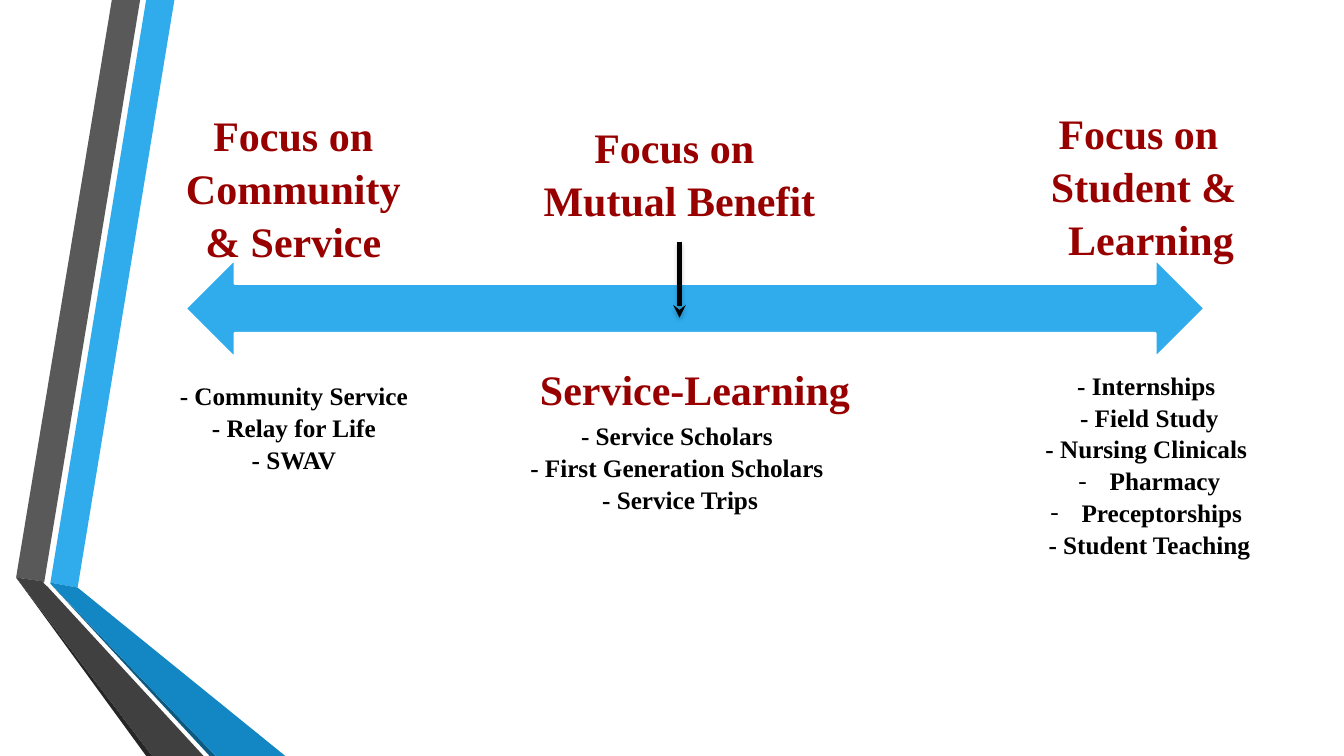
from collections import namedtuple

from lxml import etree
from pptx import Presentation, util as u
from pptx.dml.color import RGBColor
from pptx.enum import shapes, text
from pptx.oxml import ns, parse_xml

BLUE = RGBColor(0x30, 0xAC, 0xEC)
DEEP_BLUE = RGBColor(0x12, 0x87, 0xC3)
NAVY = RGBColor(0x0C, 0x5A, 0x82)
GRAY = RGBColor(0x59, 0x59, 0x59)
DARK_GRAY = RGBColor(0x40, 0x40, 0x40)
COAL = RGBColor(0x26, 0x26, 0x26)
RED = RGBColor(0x98, 0x00, 0x00)
BLACK = RGBColor(0x00, 0x00, 0x00)
WHITE = RGBColor(0xFF, 0xFF, 0xFF)
FONT = "Times New Roman"
HEADING, ITEM = 30, 18

SHADOW = (
    f'<a:effectLst {ns.nsdecls("a")}>'
    '<a:outerShdw blurRad="38100" dist="25400" dir="5400000" rotWithShape="0">'
    '<a:srgbClr val="000000"><a:alpha val="25000"/></a:srgbClr>'
    '</a:outerShdw></a:effectLst>'
)

RIBBONS = [
    (BLUE, [(12.73, 77.07), (22.85, 77.73), (58.8, 0), (48.31, 0)]),
    (GRAY, [(46.07, 0), (35.58, 0), (0, 76.4), (10.49, 76.93)]),
    (COAL, [(0, 76.4), (48.31, 100), (50.56, 100)]),
    (NAVY, [(12.73, 77.2), (71.91, 100), (74.16, 100)]),
    (DEEP_BLUE, [(12.73, 77.2), (74.16, 100), (100, 100), (22.85, 77.73), (12.73, 77.07)]),
    (DARK_GRAY, [(69.66, 100), (11.99, 77.73), (10.11, 77.07), (10.49, 76.93),
                 (0, 76.4), (50.56, 100)]),
]


class Box(namedtuple("Box", "left top width height")):
    def point(self, across, down):
        return (round(self.left + self.width * across / 100),
                round(self.top + self.height * down / 100))

    def area(self, left, top, width, height):
        return Box(*self.point(left, top),
                   round(self.width * width / 100), round(self.height * height / 100))


def draw_ribbons(page, box):
    for color, corners in RIBBONS:
        points = [box.point(*corner) for corner in corners]
        builder = page.shapes.build_freeform(*points[0])
        builder.add_line_segments(points[1:], close=True)
        ribbon = builder.convert_to_shape()
        ribbon.shadow.inherit = False
        ribbon.fill.solid()
        ribbon.fill.fore_color.rgb = color
        ribbon.line.fill.background()


def draw_spectrum(page, box):
    arrow = page.shapes.add_shape(shapes.MSO_SHAPE.LEFT_RIGHT_ARROW, *box)
    arrow.shadow.inherit = False
    arrow.fill.solid()
    arrow.fill.fore_color.rgb = BLUE
    arrow.line.color.rgb = WHITE
    arrow.line.width = u.Pt(1.75)

    pointer = page.shapes.add_connector(
        shapes.MSO_CONNECTOR.STRAIGHT, *box.point(48.47, -17.35), *box.point(48.47, 59.18))
    pointer.line.color.rgb = BLACK
    pointer.line.width = u.Pt(3)
    outline = pointer._element.spPr.find(ns.qn("a:ln"))
    etree.SubElement(outline, ns.qn("a:tailEnd"), type="stealth")
    pointer._element.spPr.append(parse_xml(SHADOW))


def set_indent(para, left, first):
    properties = para._p.get_or_add_pPr()
    properties.set("marL", str(u.Inches(left)))
    properties.set("indent", str(u.Inches(first)))
    return properties


def add_dash(para):
    properties = set_indent(para, 0.31, -0.31)
    color = etree.SubElement(properties, ns.qn("a:buClr"))
    etree.SubElement(color, ns.qn("a:srgbClr"), val=str(BLACK))
    etree.SubElement(properties, ns.qn("a:buFont"), typeface=FONT)
    etree.SubElement(properties, ns.qn("a:buChar"), char="-")


def write_lines(page, box, lines, size, color, dashed=(), hanging=False):
    frame = page.shapes.add_textbox(*box).text_frame
    frame.word_wrap = True
    for index, line in enumerate(lines):
        para = frame.paragraphs[0] if index == 0 else frame.add_paragraph()
        para.alignment = text.PP_ALIGN.CENTER
        para.line_spacing = 1.05
        if hanging:
            set_indent(para, 0.5, -0.25)
        if line in dashed:
            add_dash(para)
        span = para.add_run()
        span.text = line
        span.font.name = FONT
        span.font.size = u.Pt(size)
        span.font.bold = True
        span.font.color.rgb = color


def draw_community(page, box):
    write_lines(page, box.area(12.3, 13.47, 19.05, 11.87),
                ["Focus on Community & Service"], HEADING, RED)
    write_lines(page, box.area(7.95, 49.47, 27.83, 8.27),
                ["- Community Service", "- Relay for Life", "- SWAV"], ITEM, BLACK)


def draw_mutual_benefit(page, box):
    write_lines(page, box.area(36.61, 15.07, 27.91, 16.93),
                ["Focus on ", "Mutual Benefit"], HEADING, RED)
    write_lines(page, box.area(36.76, 47.07, 29.93, 12.13),
                ["Service-Learning"], HEADING, RED)
    write_lines(page, box.area(25.58, 54.8, 50.04, 13.47),
                ["- Service Scholars ", "- First Generation Scholars ", "- Service Trips"],
                ITEM, BLACK)


def draw_student(page, box):
    write_lines(page, box.area(74.64, 13.2, 19.05, 16.13),
                ["Focus on ", "Student & Learning "], HEADING, RED, hanging=True)
    write_lines(page, box.area(75.62, 48.13, 19.8, 16),
                ["- Internships ", "- Field Study", "- Nursing Clinicals ",
                 "Pharmacy", "Preceptorships ", "- Student Teaching"],
                ITEM, BLACK, dashed=("Pharmacy", "Preceptorships "))


def main():
    deck = Presentation()
    deck.slide_width, deck.slide_height = u.Inches(13.33), u.Inches(7.5)
    page = deck.slides.add_slide(deck.slide_layouts[6])
    whole = Box(0, 0, deck.slide_width, deck.slide_height)
    draw_ribbons(page, whole.area(1.2, 0, 20.03, 100))
    draw_spectrum(page, whole.area(13.8, 34.27, 75.84, 13.07))
    draw_community(page, whole)
    draw_mutual_benefit(page, whole)
    draw_student(page, whole)
    deck.save("out.pptx")


if __name__ == "__main__":
    main()
